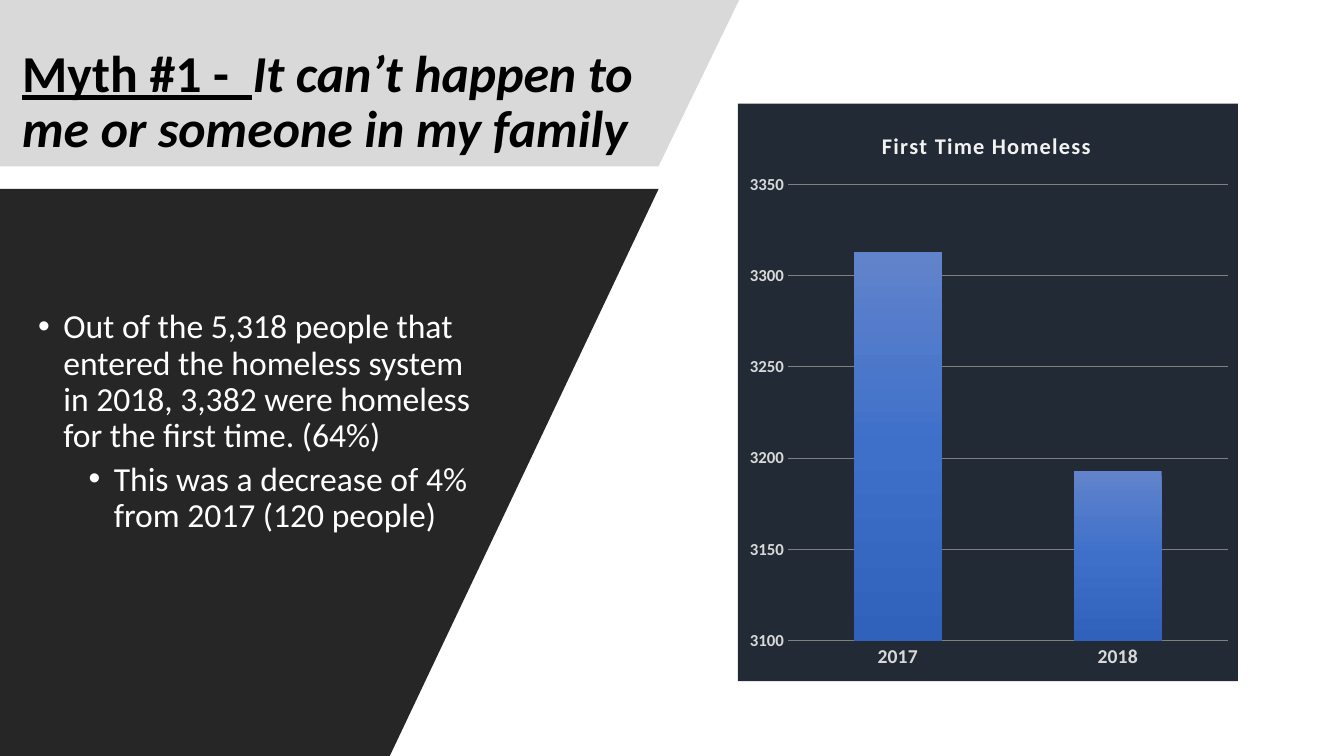
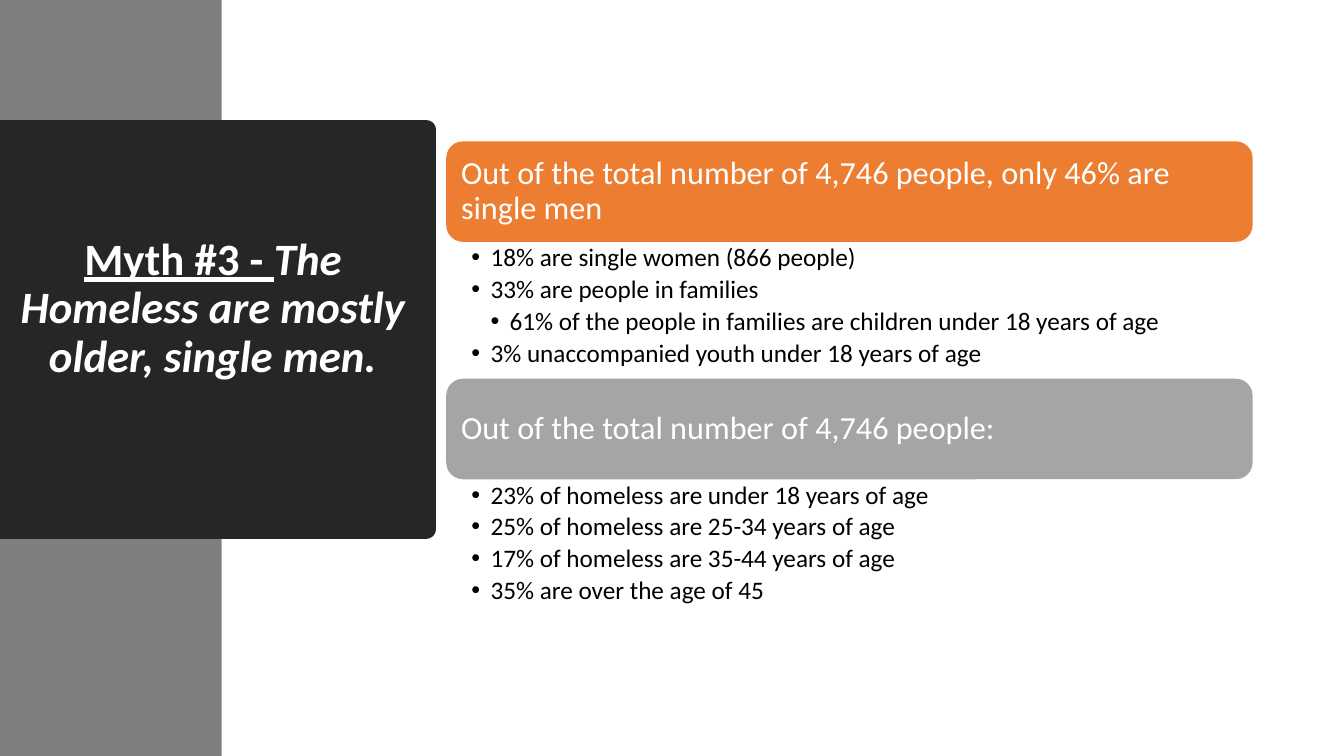
from pptx import Presentation, util as u
from pptx.chart.data import CategoryChartData
from pptx.dml.color import RGBColor
from pptx.enum import chart as charts, shapes, text
from pptx.oxml import parse_xml
from pptx.oxml.ns import nsdecls, qn

FONT = "Calibri"
BLACK, WHITE, CHARCOAL = "000000", "FFFFFF", "262626"
color = RGBColor.from_string

deck = Presentation()
deck.slide_width, deck.slide_height = u.Inches(13.33), u.Inches(7.5)
# A grid of 100 columns by 100 rows covers the slide
COLUMN, ROW = deck.slide_width / 100, deck.slide_height / 100


def area(left, top, width, height):
    """Left, top, width and height, from columns and rows of the grid."""
    return [u.Emu(round(n * unit)) for n, unit in
            zip((left, top, width, height), (COLUMN, ROW, COLUMN, ROW))]


def add_bullet(frame, words, indent, hang, size, hue, gap):
    """Add a bulleted paragraph; gap is the space above all but the first."""
    line = frame.paragraphs[0]
    if line.text:
        line = frame.add_paragraph()
        line.space_before = u.Pt(gap)
    line.text = words
    line.line_spacing = 0.9
    line.font.name, line.font.size = FONT, u.Pt(size)
    line.font.color.rgb = color(hue)
    props = line._p.get_or_add_pPr()
    props.set("marL", str(u.Inches(indent)))
    props.set("indent", str(-u.Inches(hang)))
    props.append(parse_xml(f'<a:buFont {nsdecls("a")} typeface="Arial"/>'))
    props.append(parse_xml(f'<a:buChar {nsdecls("a")} char="•"/>'))


family, age = [deck.slides.add_slide(deck.slide_layouts[5]) for _ in range(2)]
painted = []

# Backdrops: slanted panels and a side band
for hue, (start, *corners) in (
    ("D9D9D9", [(0, 0), (54.9, 0), (49.2, 22), (0, 22)]),
    (CHARCOAL, [(0, 24.7), (48.7, 24.7), (29, 100), (0, 100)]),
):
    outline = family.shapes.build_freeform(*start, scale=(COLUMN, ROW))
    outline.add_line_segments(corners)
    painted.append((outline.convert_to_shape(), hue))
side_band = age.shapes.add_shape(shapes.MSO_SHAPE.RECTANGLE, *area(0, 0, 16.5, 100))
painted.append((side_band, "7F7F7F"))

# Titles, placed above the backdrops
for slide, place, size, hue, align, label, myth in (
    (family, (0.9, 5.3, 49.7, 16.7), 37, BLACK, text.PP_ALIGN.LEFT,
     "Myth #1 -  ", "It can’t happen to me or someone in my family"),
    (age, (0, 17.1, 31.7, 52.9), 32, WHITE, text.PP_ALIGN.CENTER,
     "Myth #3 - ", "The Homeless are mostly older, single men."),
):
    title = slide.shapes.title
    slide.shapes._spTree.append(title._element)
    title.left, title.top, title.width, title.height = area(*place)
    title.text_frame.auto_size = text.MSO_AUTO_SIZE.NONE
    title.text_frame.vertical_anchor = text.MSO_ANCHOR.MIDDLE
    heading = title.text_frame.paragraphs[0]
    heading.alignment, heading.line_spacing = align, 0.9
    heading.font.name, heading.font.size, heading.font.bold = FONT, u.Pt(size), True
    heading.font.color.rgb = color(hue)
    for words, is_label in ((label, True), (myth, False)):
        run = heading.add_run()
        run.text = words
        run.font.underline, run.font.italic = is_label, not is_label

# The second title sits on a dark plate with rounded corners
plate = age.shapes.title
plate.fill.solid()
plate.fill.fore_color.rgb = plate.line.color.rgb = color(CHARCOAL)
plate.line.width = u.Pt(13.75)
plate.line._get_or_add_ln().append(parse_xml(f'<a:round {nsdecls("a")}/>'))
plate.text_frame.margin_bottom = u.Inches(0.45)

# Myth 1: key figures
figures = family.shapes.add_textbox(*area(2.1, 31.7, 34.4, 48.3)).text_frame
figures.word_wrap = True
figures.vertical_anchor = text.MSO_ANCHOR.MIDDLE
for words, indent in (
    ("Out of the 5,318 people that entered the homeless system in 2018, "
     "3,382 were homeless for the first time. (64%)", 0.25),
    ("This was a decrease of 4% from 2017 (120 people)", 0.75),
):
    add_bullet(figures, words, indent, 0.25, 24, WHITE, 5)

# Myth 1: first time homeless by year
counts = CategoryChartData()
counts.categories = ["2017", "2018"]
counts.add_series("First Time Homeless ", (3313, 3193))
chart = family.shapes.add_chart(charts.XL_CHART_TYPE.COLUMN_CLUSTERED,
                                *area(54.9, 13.7, 37.2, 76.4), counts).chart
chart.has_legend = False
chart.font.name, chart.font.size = FONT, u.Pt(10)
chart.font.color.rgb = color(WHITE)
chart._chartSpace.find(qn("c:chart")).addnext(parse_xml(
    f'<c:spPr {nsdecls("c", "a")}><a:solidFill><a:srgbClr val="222A35"/></a:solidFill>'
    '<a:ln><a:noFill/></a:ln></c:spPr>'))

caption = chart.chart_title.text_frame.paragraphs[0]
caption_run = caption.add_run()
caption_run.text = "First Time Homeless "
caption_run.font.name, caption_run.font.size = FONT, u.Pt(16)
caption_run.font.bold = True
caption_run.font.color.rgb = color("F2F2F2")
caption_run._r.get_or_add_rPr().set("spc", "100")

for axis, size in ((chart.category_axis, 14), (chart.value_axis, 12)):
    axis.major_tick_mark = axis.minor_tick_mark = charts.XL_TICK_MARK.NONE
    axis.format.line.fill.background()
    labels = axis.tick_labels.font
    labels.name, labels.size, labels.bold = FONT, u.Pt(size), True
    labels.color.rgb = color("D9D9D9")
scale = chart.value_axis
scale.minimum_scale, scale.maximum_scale, scale.major_unit = 3100, 3350, 50
scale.major_gridlines.format.line.color.rgb = color("808080")
scale.major_gridlines.format.line.width = u.Pt(0.75)

columns = chart.plots[0]
columns.gap_width, columns.vary_by_categories = 150, False
people = columns.series[0]
people.format.fill.solid()
solid = people._element.find(qn("c:spPr")).find(qn("a:solidFill"))
stops = "".join(f'<a:gs pos="{pos}"><a:srgbClr val="{hue}"/></a:gs>' for pos, hue in
                ((0, "6183CB"), (50000, "3E70CA"), (100000, "3062BB")))
solid.getparent().replace(solid, parse_xml(
    f'<a:gradFill {nsdecls("a")}><a:gsLst>{stops}</a:gsLst>'
    '<a:lin ang="5400000" scaled="0"/></a:gradFill>'))

# Shares of the chart's size taken by its title and its plot
for part, index, target, shares in (
    (chart.chart_title._element, 1, "", {"x": 0.28, "y": 0.04}),
    (chart._chartSpace.find(".//" + qn("c:plotArea")), 0,
     '<c:layoutTarget val="inner"/>', {"x": 0.1, "y": 0.14, "w": 0.88, "h": 0.79}),
):
    for old in part.findall(qn("c:layout")):
        part.remove(old)
    modes = "".join(f'<c:{key}Mode val="edge"/>' for key in "xy")
    sizes = "".join(f'<c:{key} val="{share}"/>' for key, share in shares.items())
    part.insert(index, parse_xml(
        f'<c:layout {nsdecls("c")}><c:manualLayout>{target}{modes}{sizes}'
        '</c:manualLayout></c:layout>'))

# Myth 3: banners, each with its list below
BANNER, LIST = 13.3, 18
groups = (
    ("ED7D31", "Out of the total number of 4,746 people, only 46% are single men", (
        ("18% are single women (866 people)", 1),
        ("33% are people in families", 1),
        ("61% of the people in families are children under 18 years of age", 2),
        ("3% unaccompanied youth under 18 years of age", 1))),
    ("A5A5A5", "Out of the total number of 4,746 people:", (
        ("23% of homeless are under 18 years of age", 1),
        ("25% of homeless are 25-34 years of age", 1),
        ("17% of homeless are 35-44 years of age", 1),
        ("35% are over the age of 45", 1))),
)
for number, (hue, claim, shares) in enumerate(groups):
    top = 18.7 + number * (BANNER + LIST + 0.1)
    banner = age.shapes.add_shape(shapes.MSO_SHAPE.ROUNDED_RECTANGLE,
                                  *area(33.2, top, 60, BANNER))
    painted.append((banner, hue))
    frame = banner.text_frame
    frame.word_wrap = True
    frame.vertical_anchor = text.MSO_ANCHOR.MIDDLE
    frame.margin_left = frame.margin_right = u.Inches(0.1)
    line = frame.paragraphs[0]
    line.text = claim
    line.alignment, line.line_spacing = text.PP_ALIGN.LEFT, 0.9
    line.font.name, line.font.size = FONT, u.Pt(23)
    line.font.color.rgb = color(WHITE)

    details = age.shapes.add_textbox(*area(33.2, top + BANNER, 60, LIST)).text_frame
    details.word_wrap = True
    details.margin_left, details.margin_right = u.Inches(0.25), u.Inches(0.18)
    details.margin_top = details.margin_bottom = u.Inches(0.03)
    for words, level in shares:
        add_bullet(details, words, 0.19 * level, 0.19, 18, BLACK, 3.3)

# Flat colour for every drawn shape
for shape, hue in painted:
    shape.fill.solid()
    shape.fill.fore_color.rgb = color(hue)
    shape.line.fill.background()
    shape.shadow.inherit = False

deck.save("out.pptx")
